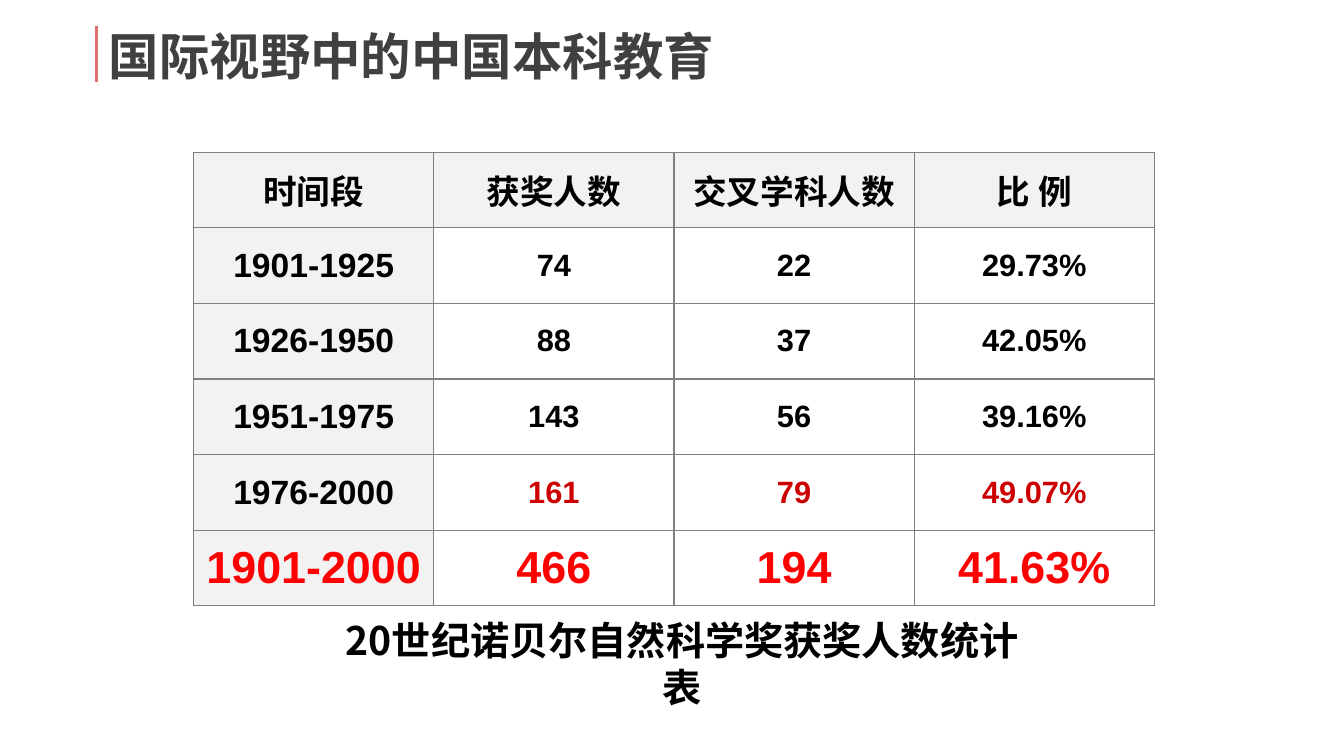
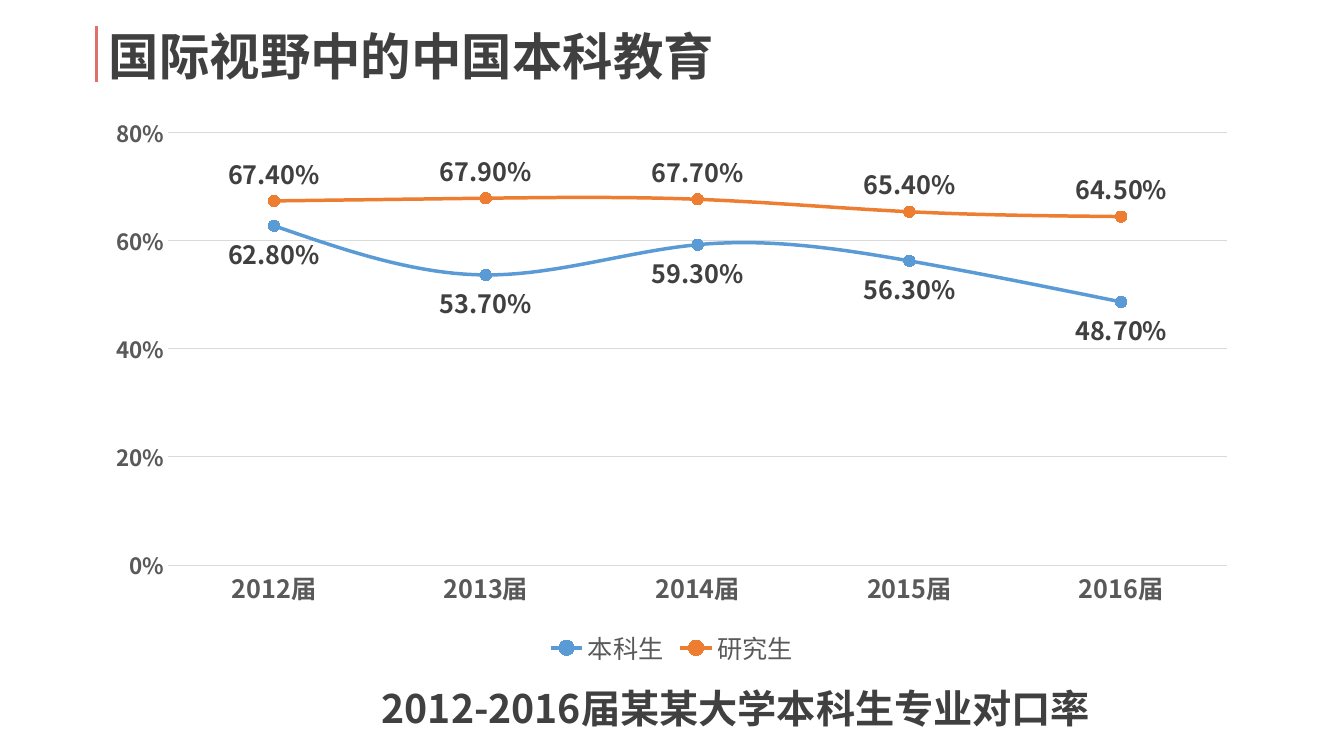
from dataclasses import dataclass

from lxml.etree import SubElement
from pptx import Presentation
from pptx.chart.data import CategoryChartData
from pptx.dml.color import RGBColor
from pptx.enum.chart import (XL_CHART_TYPE, XL_LABEL_POSITION, XL_LEGEND_POSITION,
                             XL_MARKER_STYLE, XL_TICK_MARK)
from pptx.enum.shapes import MSO_CONNECTOR
from pptx.enum.text import MSO_ANCHOR, MSO_AUTO_SIZE, PP_ALIGN
from pptx.oxml.ns import qn
from pptx.util import Inches, Pt


@dataclass(frozen=True)
class Theme:
    """Colours, fonts and type sizes shared by the slides."""
    cjk: str = "Noto Sans CJK SC"
    latin: str = "Arial"
    ink: str = "404040"
    muted: str = "595959"
    black: str = "000000"
    accent: str = "E1706C"
    recent: str = "CC0000"
    total: str = "FF0000"
    border: str = "808080"
    head_fill: str = "F2F2F2"
    grid: str = "D9D9D9"
    blue: str = "5B9BD5"
    orange: str = "ED7D31"
    title_size: int = 36
    total_size: int = 32
    caption_size: int = 28
    head_size: int = 24
    body_size: int = 22
    label_size: int = 18
    scale_size: int = 16


T = Theme()
TITLE = "国际视野中的中国本科教育"
AWARDS = [
    ("时间段", "获奖人数", "交叉学科人数", "比 例"),
    ("1901-1925", "74", "22", "29.73%"),
    ("1926-1950", "88", "37", "42.05%"),
    ("1951-1975", "143", "56", "39.16%"),
    ("1976-2000", "161", "79", "49.07%"),
    ("1901-2000", "466", "194", "41.63%"),
]
YEARS = [f"{year}届" for year in range(2012, 2017)]
MATCH_RATES = [
    ("本科生", (0.628, 0.537, 0.593, 0.563, 0.487), T.blue, XL_LABEL_POSITION.BELOW),
    ("研究生", (0.674, 0.679, 0.677, 0.654, 0.645), T.orange, XL_LABEL_POSITION.ABOVE),
]


def rgb(color):
    """Turn a hex string into a colour."""
    return RGBColor.from_string(color)


def set_font(font, size, color, bold=True, name=T.cjk):
    """Format a font, with the same CJK face for East Asian text."""
    font.size, font.bold, font.name = Pt(size), bold, name
    font.color.rgb = rgb(color)
    SubElement(font._rPr, qn("a:ea")).set("typeface", T.cjk)


def set_line(line, color, width):
    """Give a line its colour and width in points."""
    line.color.rgb, line.width = rgb(color), Pt(width)


def write(tf, text, align=PP_ALIGN.CENTER, spacing=None, **font):
    """Write one formatted paragraph into a text frame."""
    p = tf.paragraphs[0]
    p.alignment, p.line_spacing = align, spacing
    r = p.add_run()
    r.text = text
    set_font(r.font, **font)


def add_title_slide(prs, title):
    """Add a slide with the shared title and its accent rule."""
    s = prs.slides.add_slide(prs.slide_layouts[5])
    sp = s.shapes.title
    sp.left, sp.top, sp.width, sp.height = map(Inches, (0.98, 0.26, 7.3, 0.58))
    tf = sp.text_frame
    tf.auto_size, tf.vertical_anchor = MSO_AUTO_SIZE.NONE, MSO_ANCHOR.MIDDLE
    write(tf, title, align=PP_ALIGN.LEFT, size=T.title_size, color=T.ink)
    rule = s.shapes.add_connector(
        MSO_CONNECTOR.STRAIGHT, *map(Inches, (0.96, 0.26, 0.96, 0.81)))
    set_line(rule.line, T.accent, 2)
    SubElement(rule._element.spPr, qn("a:effectLst"))
    return s


def add_caption(s, box, text, color, insets=(0.1, 0.1), spacing=None):
    """Add a centred caption in the given box."""
    tf = s.shapes.add_textbox(*map(Inches, box)).text_frame
    tf.word_wrap, tf.vertical_anchor = True, MSO_ANCHOR.MIDDLE
    tf.margin_left, tf.margin_right = map(Inches, insets)
    write(tf, text, spacing=spacing, size=T.caption_size, color=color)


def set_borders(cell, color, width):
    """Draw all four borders of a table cell."""
    tcPr = cell._tc.get_or_add_tcPr()
    for side in ("lnL", "lnR", "lnT", "lnB"):
        ln = SubElement(tcPr, qn(f"a:{side}"), w=str(Pt(width)))
        SubElement(SubElement(ln, qn("a:solidFill")), qn("a:srgbClr"), val=color)


def award_style(row, col):
    """Return the type size and colour for a cell of the award table."""
    last = len(AWARDS) - 1
    if row == last:
        return {"size": T.total_size, "color": T.total}
    if row == 0 or col == 0:
        return {"size": T.head_size, "color": T.black}
    return {"size": T.body_size, "color": T.recent if row == last - 1 else T.black}


def add_award_table(s, box):
    """Add the award table with equal rows and columns filling the box."""
    rows, cols = len(AWARDS), len(AWARDS[0])
    table = s.shapes.add_table(rows, cols, *map(Inches, box)).table
    table.first_row = table.horz_banding = False
    for row, values in enumerate(AWARDS):
        for col, value in enumerate(values):
            cell = table.cell(row, col)
            cell.vertical_anchor = MSO_ANCHOR.MIDDLE
            cell.margin_left = cell.margin_right = Inches(0.07)
            cell.margin_top = cell.margin_bottom = 0
            set_borders(cell, T.border, 1)
            if row == 0 or col == 0:
                cell.fill.solid()
                cell.fill.fore_color.rgb = rgb(T.head_fill)
            else:
                cell.fill.background()
            write(cell.text_frame, value, name=T.latin, **award_style(row, col))


def format_axes(chart):
    """Format the category axis and the percentage scale."""
    cat, val = chart.category_axis, chart.value_axis
    for axis, size in ((cat, T.label_size), (val, T.scale_size)):
        axis.major_tick_mark = axis.minor_tick_mark = XL_TICK_MARK.NONE
        set_font(axis.tick_labels.font, size, T.muted)
    set_line(cat.format.line, T.grid, 0.75)
    val.minimum_scale, val.maximum_scale, val.major_unit = 0, 0.8, 0.2
    val.tick_labels.number_format = "0%"
    val.tick_labels.number_format_is_linked = False
    val.format.line.fill.background()
    set_line(val.major_gridlines.format.line, T.grid, 0.75)


def format_series(series, color, position):
    """Format one smooth line with its markers and labels."""
    series.smooth = True
    set_line(series.format.line, color, 2.5)
    marker = series.marker
    marker.style, marker.size = XL_MARKER_STYLE.CIRCLE, 8
    marker.format.fill.solid()
    marker.format.fill.fore_color.rgb = rgb(color)
    set_line(marker.format.line, color, 0.75)
    labels = series.data_labels
    labels.show_value, labels.position = True, position
    labels.number_format, labels.number_format_is_linked = "0.00%", False
    set_font(labels.font, T.label_size, T.ink)


def add_rate_chart(s, box):
    """Add the line chart of match rates in the given box."""
    data = CategoryChartData(number_format="0.00%")
    data.categories = YEARS
    for name, values, *_ in MATCH_RATES:
        data.add_series(name, values)
    chart = s.shapes.add_chart(
        XL_CHART_TYPE.LINE_MARKERS, *map(Inches, box), data).chart
    chart.has_title = False
    set_font(chart.font, 10, T.black, bold=False)
    chart.has_legend = True
    legend = chart.legend
    legend.position, legend.include_in_layout = XL_LEGEND_POSITION.BOTTOM, False
    set_font(legend.font, T.label_size, T.muted, bold=False)
    format_axes(chart)
    plot = chart.plots[0]
    plot.vary_by_categories = False
    for series, (_, _, color, position) in zip(plot.series, MATCH_RATES):
        format_series(series, color, position)


def add_award_slide(prs):
    """Build the slide of award counts by period."""
    s = add_title_slide(prs, TITLE)
    add_award_table(s, (1.92, 1.51, 9.53, 4.5))
    add_caption(s, (2.9, 6.3, 7.53, 0.57), "20世纪诺贝尔自然科学奖获奖人数统计表",
                T.black, insets=(0.35, 0.15))


def add_rate_slide(prs):
    """Build the slide of match rates by graduating year."""
    s = add_title_slide(prs, TITLE)
    add_rate_chart(s, (0.93, 1.05, 11.47, 5.61))
    add_caption(s, (3.45, 6.68, 7.7, 0.45), "2012-2016届某某大学本科生专业对口率",
                T.ink, spacing=1.5)


def main():
    """Build and save the presentation."""
    prs = Presentation()
    prs.slide_width, prs.slide_height = Inches(13.33), Inches(7.5)
    add_award_slide(prs)
    add_rate_slide(prs)
    prs.save("out.pptx")


if __name__ == "__main__":
    main()
